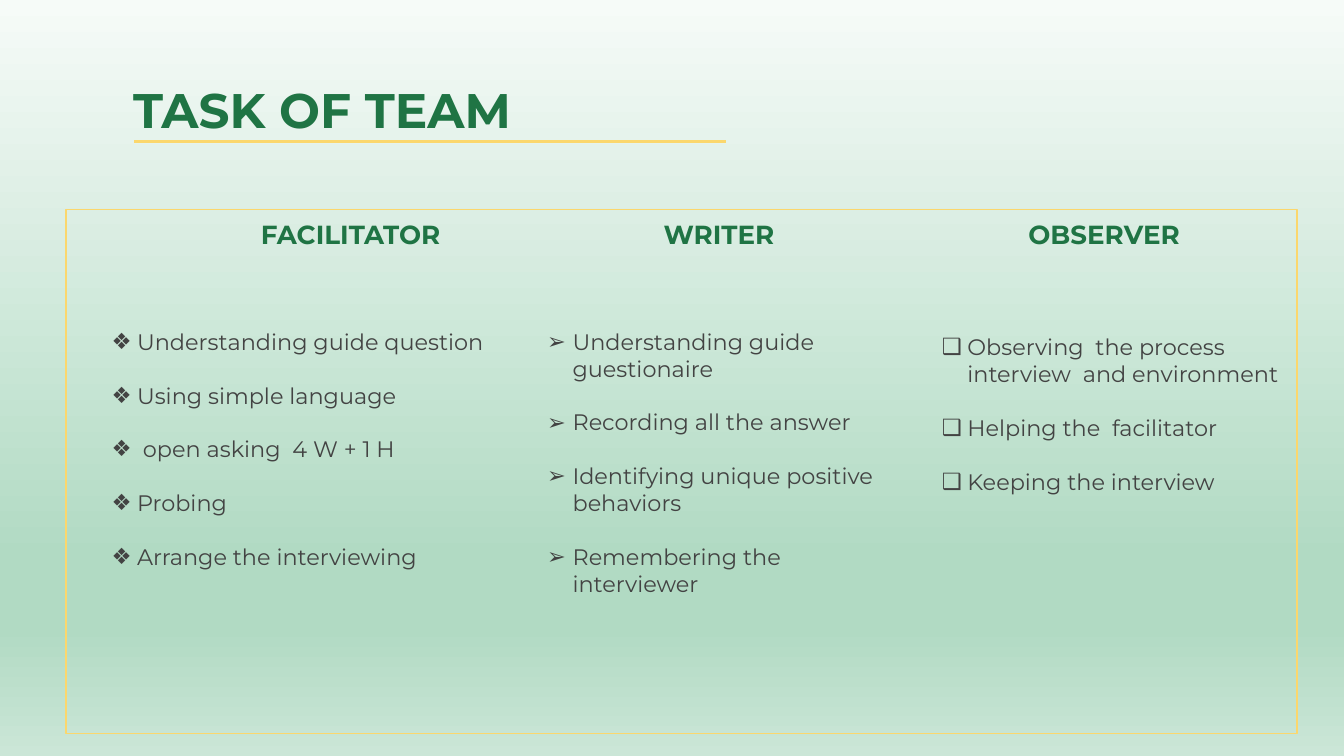
from pptx import Presentation
from pptx.dml.color import RGBColor
from pptx.enum.shapes import MSO_CONNECTOR as Line, MSO_SHAPE as Shape
from pptx.enum.text import MSO_ANCHOR as Anchor, MSO_AUTO_SIZE as Fit, PP_ALIGN as Align
from pptx.oxml import parse_xml
from pptx.oxml.ns import nsdecls, qn
from pptx.util import Inches, Pt
from lxml.etree import SubElement

GREEN = RGBColor(0x1F, 0x74, 0x44)
GOLD = RGBColor(0xFB, 0xD7, 0x6D)
GRAY = RGBColor(0x43, 0x43, 0x43)
FADE = [(0, "F6FBF8"), (74, "B1DAC3"), (83, "B1DAC3"), (100, "CBE6D7")]
FONT = "Montserrat"
WIDE = 10
HEAD_TOP, HEAD_HIGH = 1.53, 0.42

COLUMNS = [
    ("FACILITATOR", (1.71, 1.8), "❖", (0.73, 2.34, 3.32, 2.56), [
        "Understanding guide question",
        "Using simple language",
        " open asking  4 W + 1 H",
        "Probing",
        "Arrange the interviewing",
    ]),
    ("WRITER", (4.3, 2.1), "➢", (3.97, 2.34, 2.87, 2.14), [
        "Understanding guide guestionaire",
        "Recording all the answer",
        "Identifying unique positive behaviors",
        "Remembering the interviewer",
    ]),
    ("OBSERVER", (7.19, 2.05), "❑", (6.91, 2.38, 2.73, 1.57), [
        "Observing  the process interview  and environment",
        "Helping the  facilitator",
        "Keeping the interview",
    ]),
]


def paint(slide):
    """Give the slide its vertical four-stop gradient."""
    stops = "".join(
        f'<a:gs pos="{pos * 1000}"><a:srgbClr val="{tint}"/></a:gs>' for pos, tint in FADE)
    slide.element.cSld.insert(0, parse_xml(
        f'<p:bg {nsdecls("p", "a")}><p:bgPr><a:gradFill><a:gsLst>{stops}</a:gsLst>'
        '<a:lin ang="5400000" scaled="0"/></a:gradFill><a:effectLst/></p:bgPr></p:bg>'))


def place(shape, box, anchor):
    """Move a text shape to its box and return its text frame."""
    shape.left, shape.top, shape.width, shape.height = map(Inches, box)
    frame = shape.text_frame
    frame.word_wrap, frame.auto_size = True, Fit.NONE
    frame.vertical_anchor = anchor
    frame.margin_left = frame.margin_right = Inches(0.1)
    frame.margin_top = frame.margin_bottom = Inches(0.1)
    return frame


def style(para, size, color, bold=False, align=Align.LEFT):
    """Set the font and alignment of a paragraph."""
    para.alignment = align
    font = para.font
    font.name, font.size, font.bold = FONT, Pt(size), bold
    font.color.rgb = color


def mark(para, char):
    """Hang a bullet in front of a paragraph."""
    props = para._p.get_or_add_pPr()
    props.set("marL", str(Inches(0.19)))
    props.set("indent", str(-Inches(0.19)))
    tint = SubElement(props, qn("a:buClr"))
    SubElement(tint, qn("a:srgbClr"), val=str(GRAY))
    SubElement(props, qn("a:buFont"), typeface=FONT)
    SubElement(props, qn("a:buChar"), char=char)


def head(shape, box, text, size, align):
    """Fill a bold green heading."""
    para = place(shape, box, Anchor.MIDDLE).paragraphs[0]
    para.text = text
    style(para, size, GREEN, True, align)


def column(title, body, data):
    """Fill one role's heading and bulleted list."""
    name, (left, width), char, box, items = data
    head(title, (left, HEAD_TOP, width, HEAD_HIGH), name, 14, Align.CENTER)
    frame = place(body, box, Anchor.TOP)
    for i, item in enumerate(items):
        para = frame.add_paragraph() if i else frame.paragraphs[0]
        para.text = item
        para.line_spacing = 1.0
        para.space_before, para.space_after = Pt(0), Pt(14.4)
        mark(para, char)
        style(para, 12, GRAY)


def banner(slide, box):
    """Place the slide title and the rule beneath it."""
    left, top, width, high = box
    head(slide.shapes.title, box, "TASK OF TEAM", 26, Align.LEFT)
    start, level = left + 0.11, top + 0.55
    rule = slide.shapes.add_connector(
        Line.STRAIGHT, *map(Inches, (start, level, start + 4.4, level)))
    rule.line.color.rgb, rule.line.width = GOLD, Pt(1.5)
    SubElement(rule._element.spPr, qn("a:effectLst"))


def border(slide, box):
    """Draw the thin outline around the columns."""
    rect = slide.shapes.add_shape(Shape.RECTANGLE, *map(Inches, box))
    rect.shadow.inherit = False
    rect.fill.background()
    rect.line.color.rgb, rect.line.width = GOLD, Pt(0.75)


def main():
    """Build and save the slide."""
    deck = Presentation()
    deck.slide_width, deck.slide_height = Inches(WIDE), Inches(WIDE * 9 / 16)
    slide = deck.slides.add_slide(deck.slide_layouts[4])
    paint(slide)
    border(slide, (0.49, 1.56, 9.16, 3.9))
    banner(slide, (0.89, 0.5, 8.21, 0.63))
    slots = list(slide.placeholders)[1:5]
    slots += [slide.shapes.add_textbox(0, 0, 0, 0) for _ in range(2)]
    for title, body, data in zip(slots[::2], slots[1::2], COLUMNS):
        column(title, body, data)
    deck.save("out.pptx")


if __name__ == "__main__":
    main()
